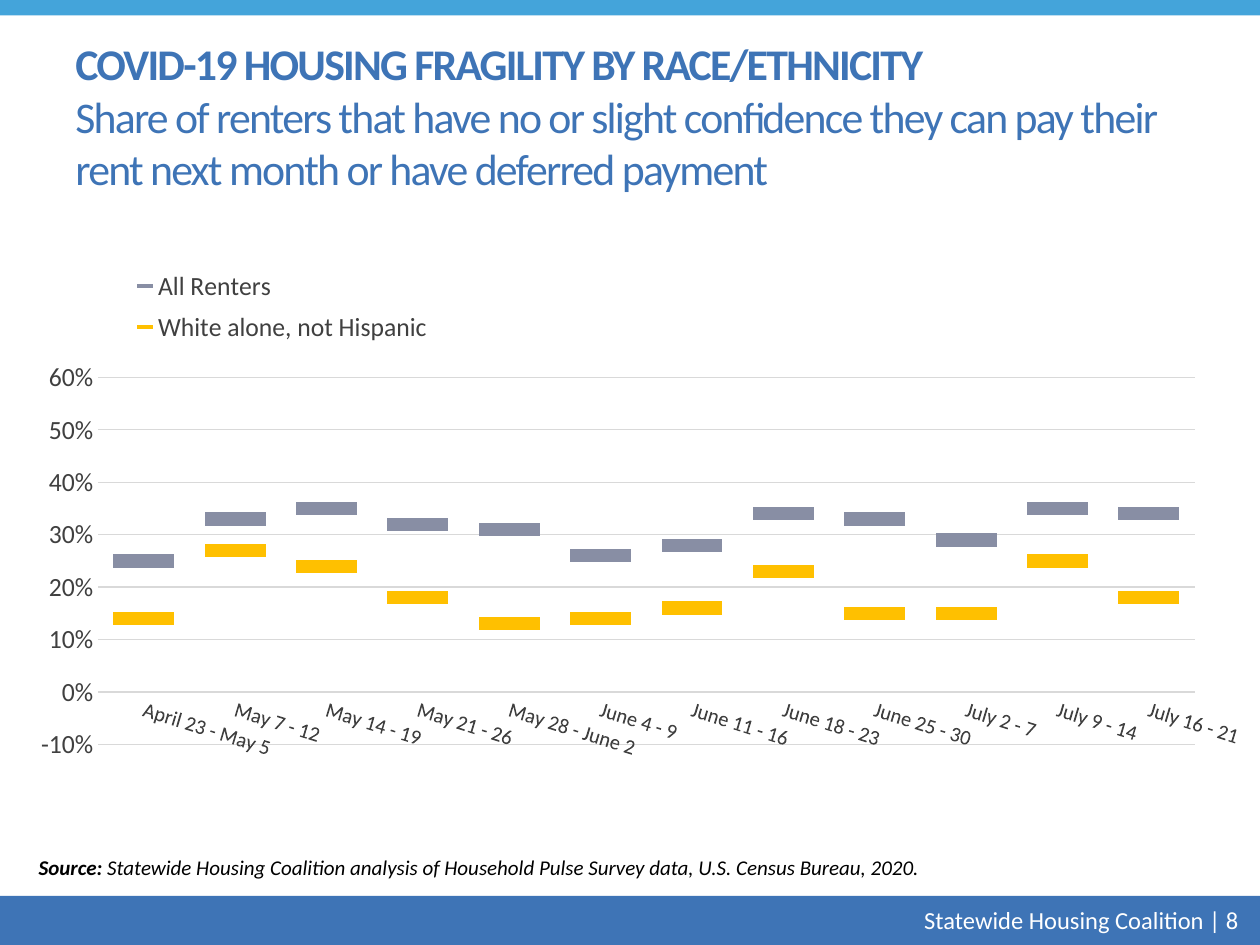
from lxml.etree import SubElement
from pptx import Presentation
from pptx.chart.data import CategoryChartData
from pptx.dml.color import RGBColor
from pptx.enum.chart import XL_CHART_TYPE, XL_LEGEND_POSITION, XL_MARKER_STYLE, XL_TICK_MARK
from pptx.enum.shapes import MSO_SHAPE
from pptx.enum.text import MSO_ANCHOR, PP_ALIGN
from pptx.oxml import parse_xml
from pptx.oxml.ns import nsdecls, qn
from pptx.util import Pt

FONT = "Calibri"
BLUE, SKY, WHITE, BLACK = "3E74B6", "44A4DA", "FFFFFF", "000000"
GRAY, GRID = "404040", "D9D9D9"

WEEKS = ["April 23 - May 5", "May 7 - 12", "May 14 - 19", "May 21 - 26",
         "May 28 - June 2", "June 4 - 9", "June 11 - 16", "June 18 - 23",
         "June 25 - 30", "July 2 - 7", "July 9 - 14", "July 16 - 21"]
SERIES = [
    ("All Renters", "888EA4",
     [0.25, 0.33, 0.35, 0.32, 0.31, 0.26, 0.28, 0.34, 0.33, 0.29, 0.35, 0.34]),
    ("White alone, not Hispanic", "FFC000",
     [0.14, 0.27, 0.24, 0.18, 0.13, 0.14, 0.16, 0.23, 0.15, 0.15, 0.25, 0.18]),
]


def rgb(color):
    return RGBColor.from_string(color)


def set_font(font, size, color, bold=False, italic=False):
    font.name, font.size = FONT, Pt(size)
    font.bold, font.italic = bold, italic
    font.color.rgb = rgb(color)


def add_run(p, text, spacing=0, **fmt):
    r = p.add_run()
    r.text = text
    set_font(r.font, **fmt)
    if spacing:
        r.font._element.set("spc", str(spacing * 100))


def add_text_box(s, x, y, w, h, anchor=MSO_ANCHOR.MIDDLE, align=PP_ALIGN.LEFT):
    """Add a wrapping text box and return its first paragraph."""
    tf = s.shapes.add_textbox(Pt(x), Pt(y), Pt(w), Pt(h)).text_frame
    tf.word_wrap = True
    tf.vertical_anchor = anchor
    p = tf.paragraphs[0]
    p.alignment = align
    return p


def add_band(s, y, h, color):
    sp = s.shapes.add_shape(MSO_SHAPE.RECTANGLE, 0, Pt(y), Pt(720), Pt(h))
    sp.shadow.inherit = False
    sp.fill.solid()
    sp.fill.fore_color.rgb = rgb(color)
    sp.line.fill.background()


def manual_layout(x, y, w, h, inner=False):
    """Return a c:layout element placed in fractions of the chart."""
    layout = parse_xml(f"<c:layout {nsdecls('c')}/>")
    manual = SubElement(layout, qn("c:manualLayout"))
    parts = [("layoutTarget", "inner")] if inner else []
    parts += [("xMode", "edge"), ("yMode", "edge"),
              ("x", x), ("y", y), ("w", w), ("h", h)]
    for tag, val in parts:
        SubElement(manual, qn(f"c:{tag}")).set("val", str(val))
    return layout


def place_plot(chart, *box):
    area = chart._chartSpace.chart.plotArea
    for old in area.findall(qn("c:layout")):
        area.remove(old)
    area.insert(0, manual_layout(*box, inner=True))


def place_legend(chart, *box):
    chart.has_legend = True
    legend = chart.legend
    legend.position = XL_LEGEND_POSITION.BOTTOM
    legend.include_in_layout = False
    set_font(legend.font, 15, GRAY)
    for old in legend._element.findall(qn("c:layout")):
        legend._element.remove(old)
    legend._element.find(qn("c:legendPos")).addnext(manual_layout(*box))
    legend.include_in_layout = True


def style_line(line, color):
    line.color.rgb = rgb(color)
    line.width = Pt(0.75)


def style_axes(chart):
    cat, val = chart.category_axis, chart.value_axis
    for axis, size in ((cat, 12), (val, 15)):
        axis.major_tick_mark = axis.minor_tick_mark = XL_TICK_MARK.NONE
        set_font(axis.tick_labels.font, size, GRAY)
    style_line(cat.format.line, GRID)
    cat._element.find(f"{qn('c:txPr')}/{qn('a:bodyPr')}").set("rot", str(17 * 60000))
    val.minimum_scale, val.maximum_scale, val.major_unit = -0.1, 0.6, 0.1
    val.format.line.fill.background()
    val.has_major_gridlines = True
    style_line(val.major_gridlines.format.line, GRID)
    val.tick_labels.number_format = "0%"
    val.tick_labels.number_format_is_linked = False


def add_dash_chart(s, x, y, w, h):
    """Add a line chart that shows only wide dash markers."""
    data = CategoryChartData(number_format="0%")
    data.categories = WEEKS
    for name, _, values in SERIES:
        data.add_series(name, values)
    chart = s.shapes.add_chart(XL_CHART_TYPE.LINE_MARKERS, Pt(x), Pt(y),
                               Pt(w), Pt(h), data).chart
    chart.has_title = False
    set_font(chart.font, 15, GRAY)
    plot = chart.plots[0]
    plot.vary_by_categories = False
    for series, (_, color, _) in zip(plot.series, SERIES):
        series.smooth = False
        series.format.line.fill.background()
        marker = series.marker
        marker.style, marker.size = XL_MARKER_STYLE.DASH, 35
        marker.format.fill.solid()
        marker.format.fill.fore_color.rgb = rgb(color)
        marker.format.line.fill.background()
    style_axes(chart)
    place_plot(chart, 0.066, 0.222, 0.918, 0.607)
    place_legend(chart, 0.07, 0.03, 0.3, 0.15)


def main():
    prs = Presentation()
    prs.slide_width, prs.slide_height = Pt(720), Pt(540)
    s = prs.slides.add_slide(prs.slide_layouts[6])

    add_band(s, 512, 28.5, BLUE)
    add_band(s, 0, 8.75, SKY)
    p = add_text_box(s, 461.5, 512.5, 253.5, 26, align=PP_ALIGN.RIGHT)
    add_run(p, "Statewide Housing Coalition | 8", size=14, color=WHITE)

    p = add_text_box(s, 36, 42, 667.5, 48)
    title = dict(size=25, color=BLUE, spacing=-1)
    add_run(p, "COVID-19 HOUSING FRAGILITY BY RACE/ETHNICITY", bold=True, **title)
    p.add_line_break()
    add_run(p, "Share of renters that have no or slight confidence they can pay "
               "their rent next month or have deferred payment", **title)

    p = add_text_box(s, 15, 484.5, 667, 22, anchor=MSO_ANCHOR.TOP)
    note = dict(size=12, color=BLACK, italic=True)
    add_run(p, "Source: ", bold=True, **note)
    add_run(p, "Statewide Housing Coalition analysis of Household Pulse Survey "
               "data, U.S. Census Bureau, 2020.", **note)

    add_dash_chart(s, 11, 139, 698.5, 345.5)
    prs.save("out.pptx")


if __name__ == "__main__":
    main()
